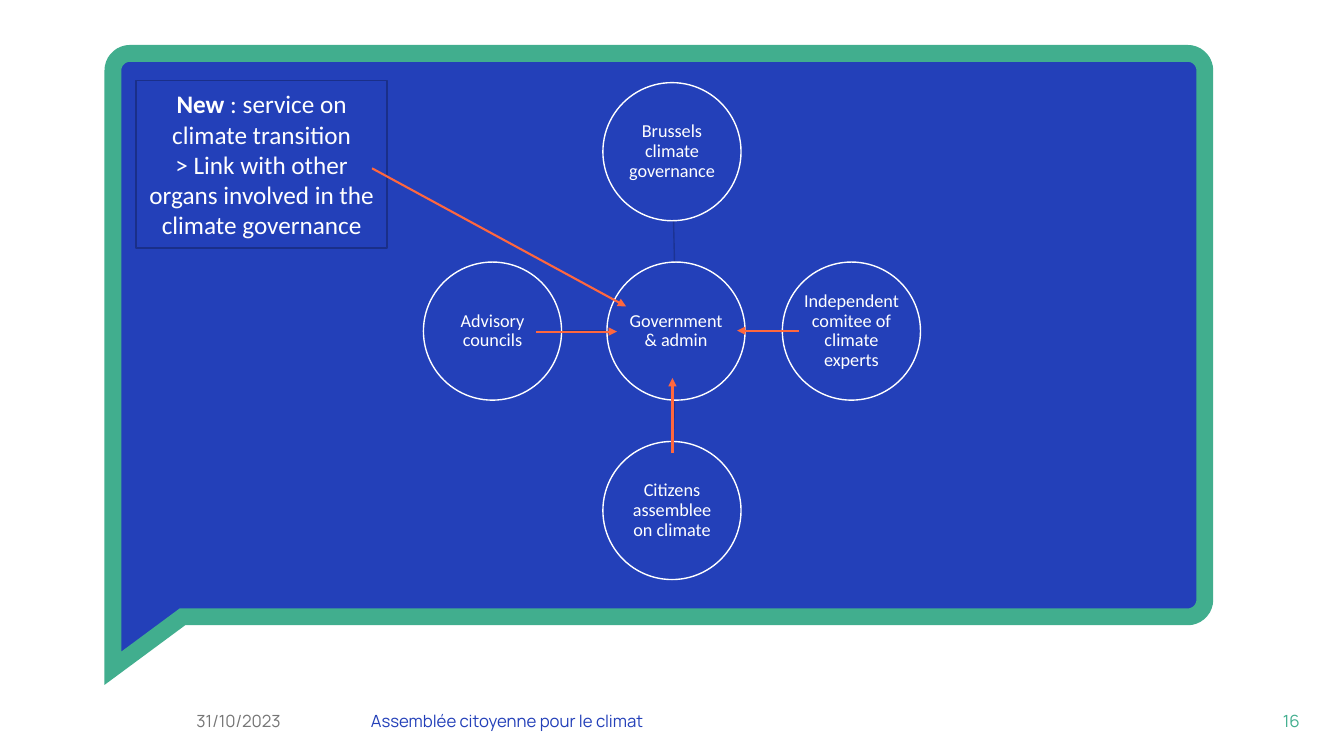
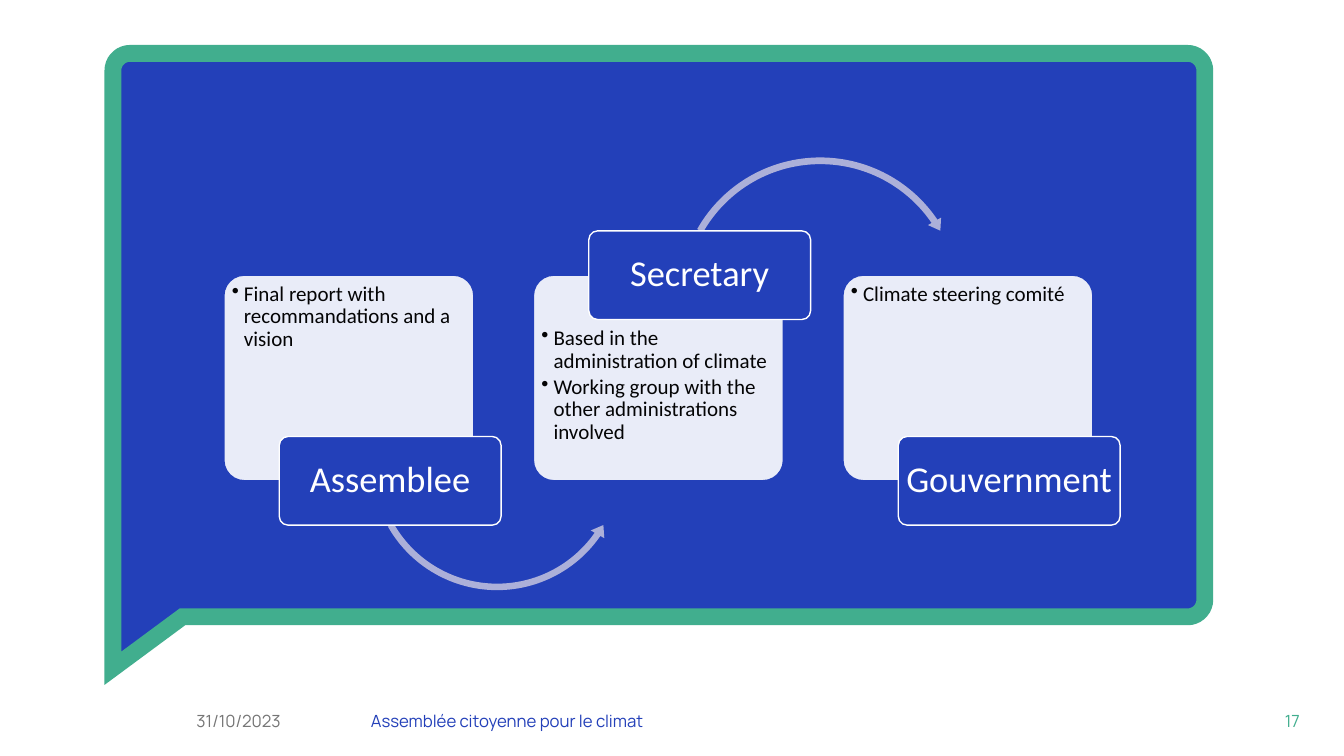
from dataclasses import dataclass
from math import cos, radians, sin
from typing import Optional

from lxml.etree import SubElement
from pptx import Presentation
from pptx.dml.color import RGBColor
from pptx.enum.shapes import MSO_CONNECTOR, MSO_SHAPE
from pptx.enum.text import MSO_ANCHOR, PP_ALIGN
from pptx.oxml.ns import qn
from pptx.util import Inches, Pt

COLORS = {
    "blue": "2340B9",
    "green": "41AE8E",
    "orange": "FF673E",
    "navy": "1A2F89",
    "spoke": "1C3394",
    "lilac": "ACB0D9",
    "gray": "757575",
    "ink": "040405",
    "white": "FFFFFF",
}
FONTS = {
    "footer": {"name": "Manrope", "size": Pt(12)},
    "circle": {"name": "Calibri", "size": Pt(13)},
    "note": {"name": "Calibri", "size": Pt(18)},
    "body": {"name": "Calibri", "size": Pt(15)},
    "label": {"name": "Calibri", "size": Pt(26)},
}
DIAMETER = 1.37
CARD_W, CARD_H, CARD_TOP, CARD_LEFT, CARD_STEP = 2.48, 2.04, 2.73, 2.22, 3.07
LABEL_W, LABEL_H, LABEL_SHIFT = 2.2, 0.88, 0.55


@dataclass
class Circle:
    text: str
    left: float
    top: float


@dataclass
class Line:
    start: tuple[float, float]
    end: tuple[float, float]


@dataclass
class Arc:
    shape: MSO_SHAPE
    left: float
    top: float
    size: float
    adjustments: tuple[float, ...]


@dataclass
class Card:
    label: str
    bullets: list[str]
    label_top: float
    text_inset: float = 0.02
    arc: Optional[Arc] = None


@dataclass
class Footer:
    text: str
    left: float
    width: float
    color: str
    align: PP_ALIGN = PP_ALIGN.LEFT


CIRCLES = [
    Circle("Government & admin", 6.02, 2.6),
    Circle("Brussels climate governance", 5.98, 0.82),
    Circle("Independent comitee of climate experts", 7.76, 2.6),
    Circle("Citizens assemblee on climate", 5.98, 4.38),
    Circle("Advisory councils", 4.2, 2.6),
]
SPOKES = [
    Line((6.69, 2.6), (6.68, 2.18)),
    Line((7.39, 3.28), (7.76, 3.28)),
    Line((6.69, 3.96), (6.68, 4.38)),
    Line((6.02, 3.28), (5.57, 3.28)),
]
ARROWS = [
    Line((5.32, 3.29), (6.12, 3.29)),
    Line((6.67, 4.49), (6.67, 3.75)),
    Line((7.92, 3.28), (7.31, 3.28)),
    Line((3.69, 1.67), (6.21, 3.04)),
]
CARDS = [
    Card("Assemblee", ["Final report with recommandations and a vision"], 4.33,
         arc=Arc(MSO_SHAPE.LEFT_CIRCULAR_ARROW, 3.64, 3.32, 2.58,
                 (0.025, 3.094, 20.849, 90.245, 0.03))),
    Card("Secretary",
         ["Based in the administration of climate",
          "Working group with the other administrations involved"], 2.29, 0.46,
         Arc(MSO_SHAPE.CIRCULAR_ARROW, 6.69, 1.52, 2.89,
             (0.023, 2.738, 195.507, 125.755, 0.026))),
    Card("Gouvernment", ["Climate steering comité"], 4.33),
]


def rgb(color: str) -> RGBColor:
    return RGBColor.from_string(COLORS[color])


def paint(sp, fill: str, line: Optional[str] = None, width: float = 1) -> None:
    sp.shadow.inherit = False
    sp.fill.solid()
    sp.fill.fore_color.rgb = rgb(fill)
    if line:
        sp.line.color.rgb = rgb(line)
        sp.line.width = Pt(width)
    else:
        sp.line.fill.background()


def add_box(s, shape: MSO_SHAPE, left: float, top: float, width: float,
            height: float, fill: str, line: Optional[str] = None):
    sp = s.shapes.add_shape(shape, Inches(left), Inches(top),
                            Inches(width), Inches(height))
    paint(sp, fill, line)
    return sp


def set_frame(sp, margin_x: float, margin_y: float,
              anchor: MSO_ANCHOR = MSO_ANCHOR.MIDDLE, wrap: bool = True):
    tf = sp.text_frame
    frame = {
        "word_wrap": wrap,
        "vertical_anchor": anchor,
        "margin_left": Inches(margin_x),
        "margin_right": Inches(margin_x),
        "margin_top": Inches(margin_y),
        "margin_bottom": Inches(margin_y),
    }
    for name, value in frame.items():
        setattr(tf, name, value)
    return tf


def add_run(p, text: str, style: str, color: str, bold: bool = False) -> None:
    r = p.add_run()
    r.text = text
    for name, value in {**FONTS[style], "bold": bold}.items():
        setattr(r.font, name, value)
    r.font.color.rgb = rgb(color)


def add_line(s, line: Line, color: str, width: float, arrow: bool = False) -> None:
    cx = s.shapes.add_connector(MSO_CONNECTOR.STRAIGHT,
                                *(Inches(v) for v in line.start + line.end))
    cx.line.color.rgb = rgb(color)
    cx.line.width = Pt(width)
    if arrow:
        SubElement(cx.line._get_or_add_ln(), qn("a:tailEnd"), type="triangle")
    SubElement(cx._element.spPr, qn("a:effectLst"))


def add_bubble(s) -> None:
    left, top, right, bottom, radius = 1.12, 0.53, 11.95, 6.12, 0.17
    corners = [
        (left + radius, top + radius, 180),
        (right - radius, top + radius, 270),
        (right - radius, bottom - radius, 0),
    ]
    points = [
        (x + radius * cos(radians(first + step)), y + radius * sin(radians(first + step)))
        for x, y, first in corners
        for step in range(0, 91, 10)
    ]
    points += [(1.81, bottom), (left, 6.63)]
    outline = [(Inches(x), Inches(y)) for x, y in points]
    builder = s.shapes.build_freeform(*outline[0])
    builder.add_line_segments(outline[1:], close=True)
    sp = builder.convert_to_shape()
    paint(sp, "blue", "green", 12)
    SubElement(sp.line._get_or_add_ln(), qn("a:miter"), lim="800000")


def add_footers(s, number: int) -> None:
    footers = [
        Footer("31/10/2023", 1.85, 1.49, "gray"),
        Footer("Assemblée citoyenne pour le climat", 3.58, 8.42, "blue"),
        Footer(str(number), 12.24, 0.75, "green", PP_ALIGN.RIGHT),
    ]
    for footer in footers:
        sp = s.shapes.add_textbox(Inches(footer.left), Inches(6.95),
                                  Inches(footer.width), Inches(0.4))
        p = set_frame(sp, 0.1, 0.05).paragraphs[0]
        p.alignment = footer.align
        add_run(p, footer.text, "footer", footer.color)


def add_base_slide(prs, number: int):
    s = prs.slides.add_slide(prs.slide_layouts[6])
    add_bubble(s)
    add_footers(s, number)
    return s


def add_circle(s, circle: Circle) -> None:
    sp = add_box(s, MSO_SHAPE.OVAL, circle.left, circle.top,
                 DIAMETER, DIAMETER, "blue", "white")
    p = set_frame(sp, 0.01, 0.01).paragraphs[0]
    p.alignment = PP_ALIGN.CENTER
    p.line_spacing = 0.9
    p.space_after = Pt(4.5)
    add_run(p, circle.text, "circle", "white")


def add_note(s) -> None:
    sp = add_box(s, MSO_SHAPE.RECTANGLE, 1.35, 0.8, 2.49, 1.66, "blue", "navy")
    tf = set_frame(sp, 0.1, 0.05)
    lines = [
        [("New", True), (" : service on climate transition", False)],
        [("> Link with other organs involved in the climate governance", False)],
    ]
    for i, runs in enumerate(lines):
        p = tf.add_paragraph() if i else tf.paragraphs[0]
        p.alignment = PP_ALIGN.CENTER
        for text, bold in runs:
            add_run(p, text, "note", "white", bold)


def add_bullet(p, text: str) -> None:
    pPr = p._p.get_or_add_pPr()
    pPr.set("marL", str(Inches(0.12)))
    pPr.set("indent", str(-Inches(0.12)))
    SubElement(pPr, qn("a:buChar"), char="•")
    p.alignment = PP_ALIGN.LEFT
    p.line_spacing = 0.9
    p.space_after = Pt(2.25)
    add_run(p, text, "body", "ink")


def add_card(s, card: Card, left: float) -> None:
    sp = add_box(s, MSO_SHAPE.ROUNDED_RECTANGLE, left, CARD_TOP,
                 CARD_W, CARD_H, "white", "blue")
    sp.adjustments[0] = 0.1
    fill_color = sp._element.spPr.find(qn("a:solidFill"))[0]
    SubElement(fill_color, qn("a:alpha"), val="90000")
    tf = set_frame(sp, 0.02, 0.02, MSO_ANCHOR.TOP)
    tf.margin_top = Inches(card.text_inset)
    for i, text in enumerate(card.bullets):
        add_bullet(tf.add_paragraph() if i else tf.paragraphs[0], text)

    if card.arc:
        arc = card.arc
        sp = add_box(s, arc.shape, arc.left, arc.top, arc.size, arc.size, "lilac")
        for i, value in enumerate(arc.adjustments):
            sp.adjustments[i] = value

    sp = add_box(s, MSO_SHAPE.ROUNDED_RECTANGLE, left + LABEL_SHIFT, card.label_top,
                 LABEL_W, LABEL_H, "blue", "white")
    sp.adjustments[0] = 0.1
    p = set_frame(sp, 0.05, 0.04, wrap=False).paragraphs[0]
    p.alignment = PP_ALIGN.CENTER
    p.line_spacing = 0.9
    add_run(p, card.label, "label", "white")


def add_governance_slide(prs) -> None:
    s = add_base_slide(prs, 16)
    for spoke in SPOKES:
        add_line(s, spoke, "spoke", 1)
    for circle in CIRCLES:
        add_circle(s, circle)
    add_note(s)
    for arrow in ARROWS:
        add_line(s, arrow, "orange", 1.5, arrow=True)


def add_process_slide(prs) -> None:
    s = add_base_slide(prs, 17)
    for i, card in enumerate(CARDS):
        add_card(s, card, CARD_LEFT + i * CARD_STEP)


def main() -> None:
    prs = Presentation()
    prs.slide_width, prs.slide_height = Inches(13.33), Inches(7.5)
    add_governance_slide(prs)
    add_process_slide(prs)
    prs.save("out.pptx")


if __name__ == "__main__":
    main()
